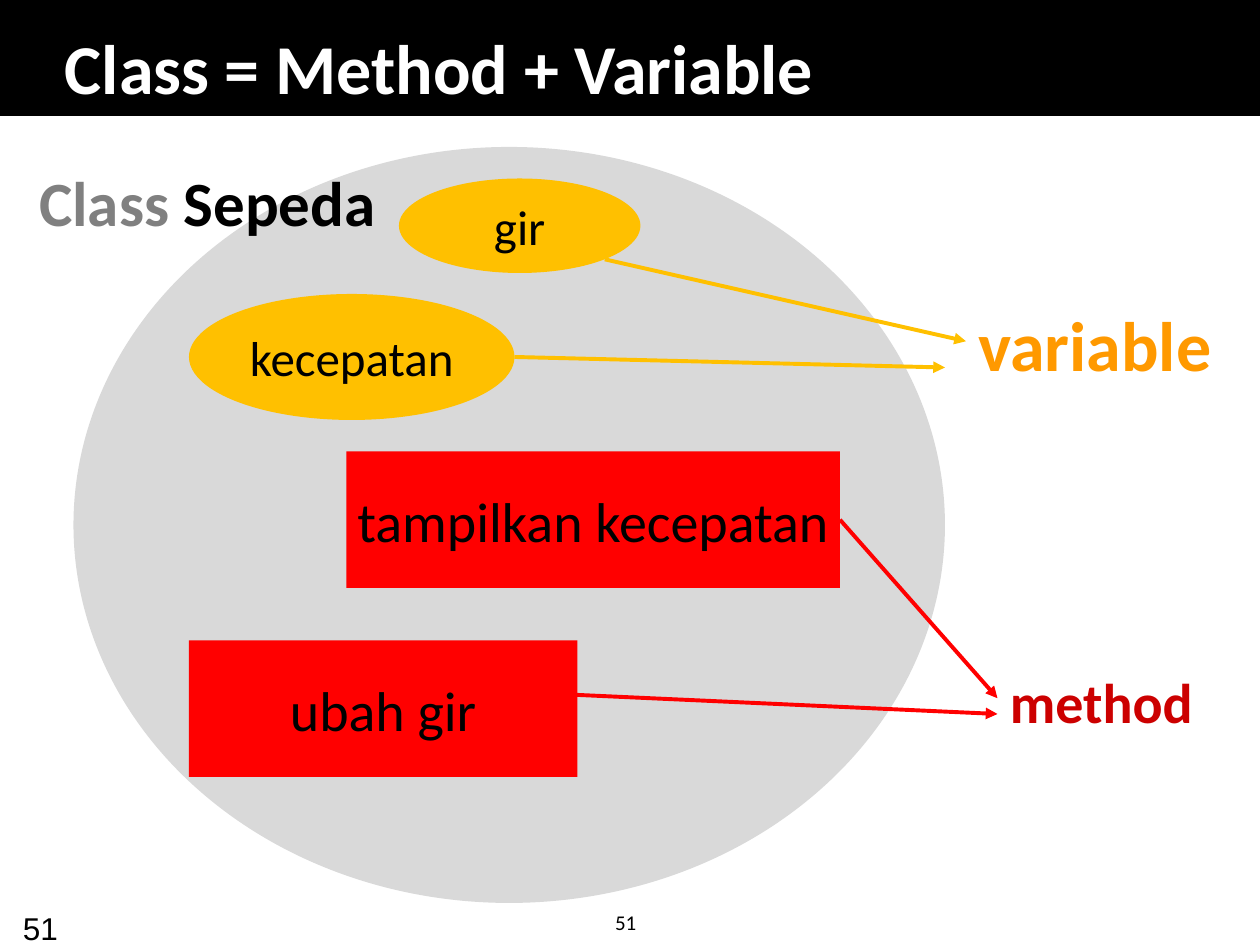
from dataclasses import dataclass

from lxml.etree import SubElement
from pptx import Presentation
from pptx.dml.color import RGBColor
from pptx.enum.shapes import MSO_CONNECTOR, MSO_SHAPE
from pptx.enum.text import MSO_ANCHOR, PP_ALIGN
from pptx.oxml.ns import qn
from pptx.util import Inches, Pt

# Grid of 120 columns by 90 rows: one cell is a twelfth of an inch
CELLS_PER_INCH = 12
COLUMNS, ROWS = 120, 90

BLACK, WHITE, GREY, PALE_GREY = "000000", "FFFFFF", "808080", "D9D9D9"
AMBER, ORANGE, RED, DARK_RED = "FFC000", "FF9900", "FF0000", "CC0000"


@dataclass
class Area:
    col: float
    row: float
    cols: float
    rows: float

    def lengths(self):
        return [cell(n) for n in (self.col, self.row, self.cols, self.rows)]


@dataclass
class Run:
    text: str
    size: float
    color: str = BLACK
    bold: bool = False
    font: str = "Calibri"


@dataclass
class Label:
    area: Area
    runs: list[Run]
    align: PP_ALIGN = PP_ALIGN.LEFT
    anchor: MSO_ANCHOR = MSO_ANCHOR.TOP
    wrap: bool = True
    spacing: float = 1.0


@dataclass
class Member:
    name: str
    kind: MSO_SHAPE
    area: Area
    size: float
    color: str
    start: tuple[float, float] | None  # None: middle of the right side
    end: tuple[float, float]


def cell(count: float) -> int:
    return Inches(count / CELLS_PER_INCH)


def rgb(color: str) -> RGBColor:
    return RGBColor.from_string(color)


def write(frame, runs: list[Run], align, anchor, wrap: bool, spacing=1.0) -> None:
    frame.word_wrap = wrap
    frame.vertical_anchor = anchor
    paragraph = frame.paragraphs[0]
    paragraph.alignment = align
    paragraph.line_spacing = spacing
    for item in runs:
        run = paragraph.add_run()
        run.text = item.text
        run.font.name = item.font
        run.font.size = Pt(item.size)
        run.font.bold = item.bold
        run.font.color.rgb = rgb(item.color)


def add_label(slide, label: Label) -> None:
    box = slide.shapes.add_textbox(*label.area.lengths())
    write(box.text_frame, label.runs, label.align, label.anchor, label.wrap, label.spacing)


def add_solid(slide, kind: MSO_SHAPE, area: Area, color: str):
    solid = slide.shapes.add_shape(kind, *area.lengths())
    solid.shadow.inherit = False
    solid.fill.solid()
    solid.fill.fore_color.rgb = rgb(color)
    solid.line.fill.background()
    return solid


def add_member(slide, member: Member):
    solid = add_solid(slide, member.kind, member.area, member.color)
    write(solid.text_frame, [Run(member.name, member.size)],
          PP_ALIGN.CENTER, MSO_ANCHOR.MIDDLE, wrap=False)
    return solid


def add_arrow(slide, member: Member, solid) -> None:
    start = member.start or (0, 0)
    arrow = slide.shapes.add_connector(
        MSO_CONNECTOR.STRAIGHT, *[cell(n) for n in (*start, *member.end)])
    if member.start is None:
        arrow.begin_connect(solid, 3)
    arrow.line.color.rgb = rgb(member.color)
    arrow.line.width = Pt(2.25)
    SubElement(arrow.line._get_or_add_ln(), qn("a:tailEnd"), type="triangle")
    SubElement(arrow._element.spPr, qn("a:effectLst"))


HEADER = Area(0, 0, COLUMNS, 11)
CLASS_BODY = Area(7, 14, 83, 72)

MEMBERS = [
    Member("kecepatan", MSO_SHAPE.OVAL, Area(18, 28, 31, 12), 28, AMBER, (49, 34), (90, 35)),
    Member("gir", MSO_SHAPE.OVAL, Area(38, 17, 23, 9), 28, AMBER, (57.6, 24.7), (92, 32.5)),
    Member("tampilkan kecepatan", MSO_SHAPE.RECTANGLE, Area(33, 43, 47, 13), 32, RED,
           None, (95, 66.5)),
    Member("ubah gir", MSO_SHAPE.RECTANGLE, Area(18, 61, 37, 13), 32, RED, (51, 66), (95, 68)),
]

LABELS = [
    Label(Area(5, 3.25, 109, 7.7), [Run("Class = Method + Variable", 40, WHITE, True)],
          anchor=MSO_ANCHOR.BOTTOM),
    Label(Area(92, 29, 26, 7), [Run("variable", 40, ORANGE, True)], spacing=0.9),
    Label(Area(95, 63, 23, 7), [Run("method", 32, DARK_RED, True)]),
    Label(Area(1, 15, 37.5, 8.5),
          [Run("Class ", 36, GREY, True), Run("Sepeda", 36, BLACK, True)],
          align=PP_ALIGN.CENTER),
    # Page numbers
    Label(Area(57.4, 86, 4.9, 3.6), [Run("51", 12)], wrap=False),
    Label(Area(1, 86, 28, 3), [Run("51", 18, font="Arial")]),
]


def main() -> None:
    deck = Presentation()
    deck.slide_width, deck.slide_height = cell(COLUMNS), cell(ROWS)
    slide = deck.slides.add_slide(deck.slide_layouts[6])

    # Header band
    band = add_solid(slide, MSO_SHAPE.RECTANGLE, HEADER, BLACK)
    band.line.color.rgb = rgb(BLACK)
    band.line.width = Pt(1)

    # Class with its variables and methods
    add_solid(slide, MSO_SHAPE.OVAL, CLASS_BODY, PALE_GREY)
    solids = [add_member(slide, member) for member in MEMBERS]
    for member, solid in zip(MEMBERS, solids):
        add_arrow(slide, member, solid)

    # Title, captions and page numbers
    for label in LABELS:
        add_label(slide, label)

    deck.save("out.pptx")


if __name__ == "__main__":
    main()
